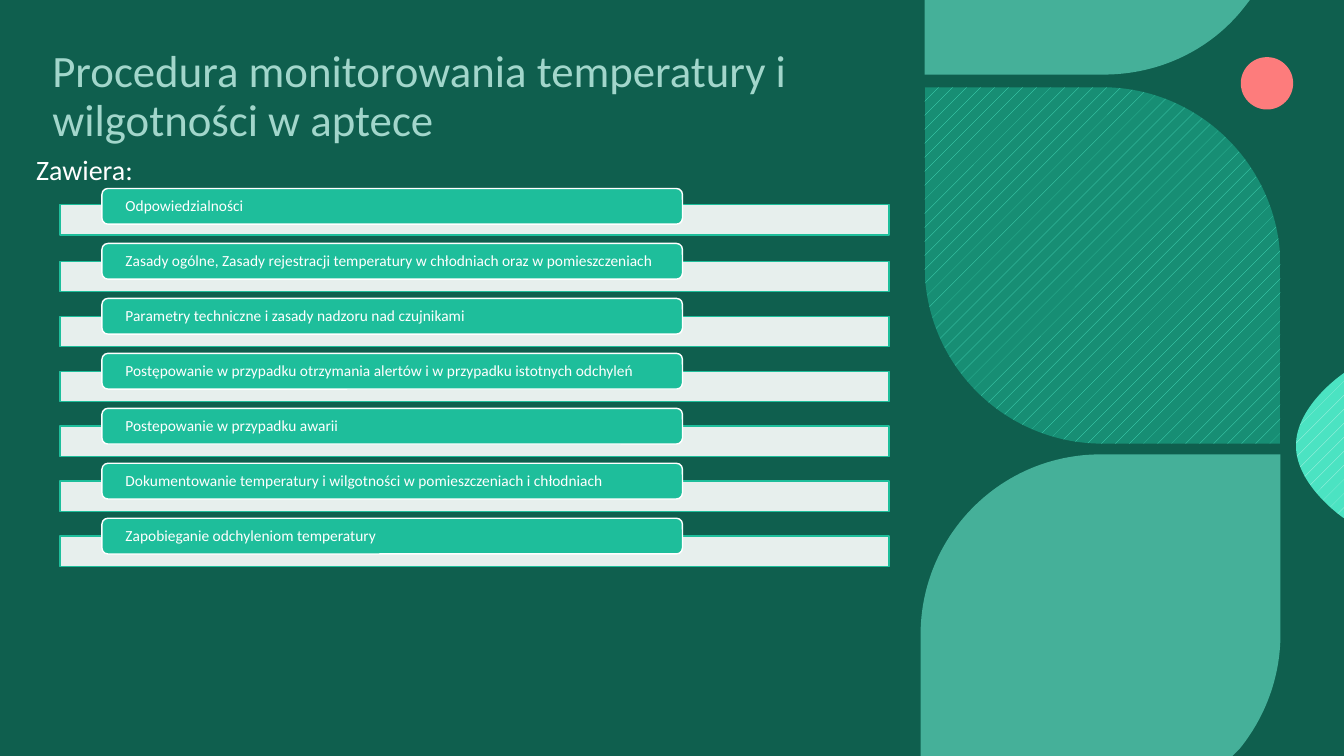
from dataclasses import dataclass

from lxml import etree
from pptx import Presentation
from pptx.dml.color import RGBColor
from pptx.enum.dml import MSO_PATTERN
from pptx.enum.shapes import MSO_SHAPE
from pptx.enum.text import MSO_ANCHOR, MSO_AUTO_SIZE, PP_ALIGN
from pptx.oxml.ns import qn
from pptx.util import Cm, Pt

RECT, ROUND, OVAL = MSO_SHAPE.RECTANGLE, MSO_SHAPE.ROUNDED_RECTANGLE, MSO_SHAPE.OVAL
TOP, MIDDLE, BOTTOM = MSO_ANCHOR.TOP, MSO_ANCHOR.MIDDLE, MSO_ANCHOR.BOTTOM
LEFT, NO_FIT, DOTS = PP_ALIGN.LEFT, MSO_AUTO_SIZE.NONE, MSO_PATTERN.PERCENT_5

TITLE = "Procedura monitorowania temperatury i wilgotności w aptece"
LEAD = "Zawiera:"
ITEMS = [
    "Odpowiedzialności",
    "Zasady ogólne, Zasady rejestracji temperatury w chłodniach oraz w pomieszczeniach",
    "Parametry techniczne i zasady nadzoru nad czujnikami",
    "Postępowanie w przypadku otrzymania alertów i w przypadku istotnych odchyleń",
    "Postepowanie w przypadku awarii",
    "Dokumentowanie temperatury i wilgotności w pomieszczeniach i chłodniach",
    "Zapobieganie odchyleniom temperatury",
]


@dataclass(frozen=True)
class Theme:
    font: str = "Calibri"
    back: str = "09392F"
    veil: str = "18997E"
    white: str = "FFFFFF"
    green: str = "1EBE9B"
    mint: str = "69E7CC"
    coral: str = "FD7C7C"
    deep: tuple = ("4BE3C2", "178E74")
    light: tuple = ("C3F6EB", "4BE3C2")
    title: int = 32
    lead: int = 20
    item: int = 11


T = Theme()
WIDE, HIGH = 33.87, 19.05

# Outlines in cm: a pair is a straight step, a triple of pairs is a cubic curve.
LEAVES = [
    ([(23.3, 0), (31.5, 0), (31.32, 0.23),
      ((30.51, 1.24), (29.24, 1.88), (27.81, 1.88)), (23.3, 1.88)], T.mint),
    ([(27.74, 11.45), (32.27, 11.45), (32.27, 15.98),
      ((32.27, 17.07), (31.88, 18.08), (31.24, 18.87)), (31.06, 19.05),
      (23.2, 19.05), (23.2, 16),
      ((23.2, 13.49), (25.22, 11.45), (27.74, 11.45))], T.mint),
    ([(33.87, 9.4), (33.87, 13.06),
      ((33.87, 13.06), (32.66, 12.24), (32.66, 11.23)),
      ((32.66, 10.21), (33.87, 9.4), (33.87, 9.4))], T.light),
    ([(32.27, 11.18), (27.79, 11.18),
      ((25.3, 11.18), (23.3, 9.17), (23.3, 6.68)), (23.3, 2.2), (27.79, 2.2),
      ((30.25, 2.2), (32.27, 4.22), (32.27, 6.71))], T.deep),
]


def rgb(code):
    return RGBColor.from_string(code)


def paint(shape, fill, line=None, alpha=None):
    """Fill with one colour, or with a pattern when given a colour pair."""
    shape.shadow.inherit = False
    if isinstance(fill, tuple):
        shape.fill.patterned()
        shape.fill.pattern = DOTS
        shape.fill.fore_color.rgb, shape.fill.back_color.rgb = map(rgb, fill)
    else:
        shape.fill.solid()
        shape.fill.fore_color.rgb = rgb(fill)
    if alpha:
        tint = shape.fill._xPr.find(".//" + qn("a:srgbClr"))
        etree.SubElement(tint, qn("a:alpha"), val=str(alpha * 1000))
    if line:
        shape.line.color.rgb = rgb(line)
        shape.line.width = Pt(1)
    else:
        shape.line.fill.background()


def write(shape, text, size, anchor=TOP, side=0.25, edge=0.13):
    frame = shape.text_frame
    frame.word_wrap = True
    frame.auto_size = NO_FIT
    frame.vertical_anchor = anchor
    frame.margin_left = frame.margin_right = Cm(side)
    frame.margin_top = frame.margin_bottom = Cm(edge)
    para = frame.paragraphs[0]
    para.alignment = LEFT
    para.line_spacing = 0.9
    run = para.add_run()
    run.text = text
    run.font.name = T.font
    run.font.size = Pt(size)
    run.font.color.rgb = rgb(T.white)


def trace(shapes, steps):
    """Draw an outline by its corners, then bend the curved steps."""
    ends = [s[-1] if isinstance(s[0], tuple) else s for s in steps]
    first, *rest = [(Cm(x), Cm(y)) for x, y in ends]
    pen = shapes.build_freeform(*first)
    pen.add_line_segments(rest, close=False)
    leaf = pen.convert_to_shape()
    route = leaf._element.find(".//" + qn("a:path"))
    lines = route.findall(qn("a:lnTo"))
    for step, line in zip(steps[1:], lines):
        if isinstance(step[0], tuple):
            curve = etree.Element(qn("a:cubicBezTo"))
            for x, y in step:
                etree.SubElement(curve, qn("a:pt"), x=str(Cm(x) - leaf.left),
                                 y=str(Cm(y) - leaf.top))
            route.replace(line, curve)
    etree.SubElement(route, qn("a:close"))
    return leaf


def add(shapes, kind, *box):
    return shapes.add_shape(kind, *map(Cm, box))


def decorate(shapes):
    paint(add(shapes, RECT, 0, 0, WIDE, HIGH), T.veil, alpha=40)
    paint(add(shapes, OVAL, 31.27, 1.44, 1.32, 1.32), T.coral)
    for steps, fill in LEAVES:
        paint(trace(shapes, steps), fill, alpha=60 if fill == T.mint else None)


def list_items(shapes):
    start, last, drop = 4.75, 13.06, 0.45
    pitch = (last - start) / (len(ITEMS) - 1)
    for i, text in enumerate(ITEMS):
        top = start + i * pitch
        lift = 0 if i else 0.05
        bar = add(shapes, RECT, 1.51, top + drop - lift, 20.9, 0.77)
        paint(bar, T.white, T.green, alpha=90)
        tab = add(shapes, ROUND, 2.57, top, 14.63, 0.9)
        paint(tab, T.green, T.white)
        write(tab, text, T.item, MIDDLE, side=0.55, edge=0)


def main():
    deck = Presentation()
    deck.slide_width, deck.slide_height = Cm(WIDE), Cm(HIGH)
    slide = deck.slides.add_slide(deck.slide_layouts[5])
    slide.background.fill.solid()
    slide.background.fill.fore_color.rgb = rgb(T.back)
    shapes = slide.shapes
    decorate(shapes)
    title = shapes.title
    title.left, title.top, title.width, title.height = map(Cm, (1.07, 0.74, 21.34, 3.07))
    write(title, TITLE, T.title, BOTTOM)
    lead = shapes.add_textbox(*map(Cm, (0.66, 3.81, 21.34, 13.16)))
    write(lead, LEAD, T.lead)
    list_items(shapes)
    deck.save("out.pptx")


if __name__ == "__main__":
    main()
